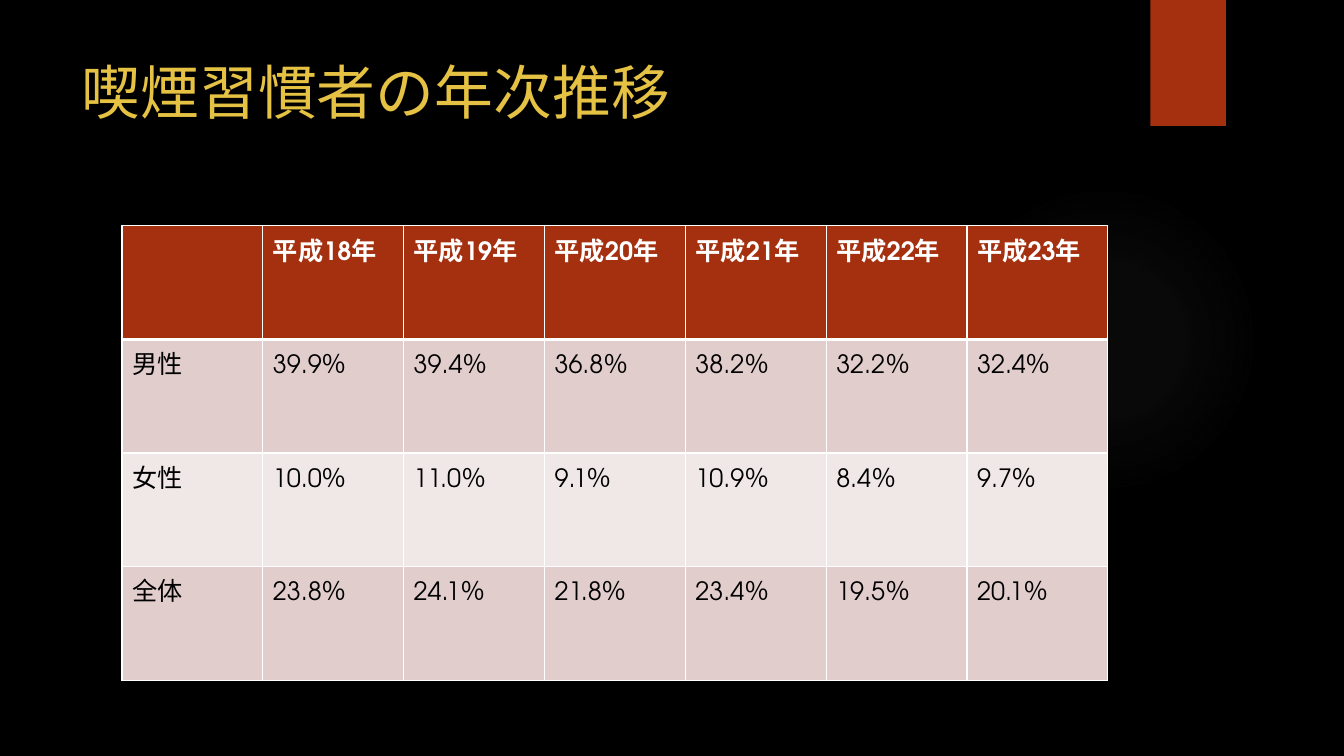
import pptx
import pptx.dml.color
import pptx.enum.shapes
import pptx.enum.text
import pptx.oxml
import pptx.oxml.ns
import pptx.util
from dataclasses import dataclass

Inches = pptx.util.Inches
Pt = pptx.util.Pt


@dataclass(frozen=True)
class Theme:
    font: str = "TeX Gyre Adventor"
    title_size: float = 42
    table_size: float = 18
    background: str = "000000"
    accent: str = "A5300F"
    title: str = "E5C243"
    glow: str = "848484"
    header_text: str = "FFFFFF"
    body_text: str = "000000"
    border: str = "FFFFFF"
    bands: tuple = ("E1CDCC", "F0E8E7")


def paint(fill, color):
    fill.solid()
    fill.fore_color.rgb = pptx.dml.color.RGBColor.from_string(color)


def xml(tag, content, attributes=""):
    return pptx.oxml.parse_xml(
        f'<a:{tag} {pptx.oxml.ns.nsdecls("a")} {attributes}>{content}</a:{tag}>')


class SlideBuilder:
    def __init__(self, slide, theme):
        self.slide = slide
        self.theme = theme
        paint(slide.background.fill, theme.background)

    def format_text(self, paragraph, size, color, bold=False):
        font = paragraph.font
        formats = {"name": self.theme.font, "size": Pt(size), "bold": bold}
        for attribute, value in formats.items():
            setattr(font, attribute, value)
        font.color.rgb = pptx.dml.color.RGBColor.from_string(color)

    def shape(self, kind, box, color):
        shape = self.slide.shapes.add_shape(kind, *map(Inches, box))
        shape.shadow.inherit = False
        shape.line.fill.background()
        paint(shape.fill, color)
        return shape

    def glow(self, box, stops):
        """Circle that fades outwards; stops are (position %, opacity %)."""
        circle = self.shape(pptx.enum.shapes.MSO_SHAPE.OVAL, box, self.theme.glow)
        stop_list = "".join(
            f'<a:gs pos="{position * 1000}"><a:srgbClr val="{self.theme.glow}">'
            f'<a:alpha val="{opacity * 1000}"/></a:srgbClr></a:gs>'
            for position, opacity in stops)
        center = '<a:fillToRect l="50000" t="50000" r="50000" b="50000"/>'
        gradient = xml("gradFill", f"<a:gsLst>{stop_list}</a:gsLst>"
                       f'<a:path path="circle">{center}</a:path>')
        properties = circle.element.spPr
        solid = properties.find(pptx.oxml.ns.qn("a:solidFill"))
        properties.replace(solid, gradient)

    def title(self, text, box):
        heading = self.slide.shapes.title
        for side, length in zip(("left", "top", "width", "height"), box):
            setattr(heading, side, Inches(length))
        frame = heading.text_frame
        frame.text = text
        formats = {"word_wrap": True,
                   "vertical_anchor": pptx.enum.text.MSO_ANCHOR.TOP,
                   "auto_size": pptx.enum.text.MSO_AUTO_SIZE.NONE}
        for attribute, value in formats.items():
            setattr(frame, attribute, value)
        frame.paragraphs[0].alignment = pptx.enum.text.PP_ALIGN.LEFT
        self.format_text(frame.paragraphs[0], self.theme.title_size, self.theme.title)

    def borders(self, cell, widths):
        properties = cell._tc.get_or_add_tcPr()
        color = f'<a:solidFill><a:srgbClr val="{self.theme.border}"/></a:solidFill>'
        for index, (side, width) in enumerate(widths.items()):
            properties.insert(index, xml(f"ln{side}", color, f'w="{Pt(width)}"'))

    def table(self, rows, box):
        table = self.slide.shapes.add_table(
            len(rows), len(rows[0]), *map(Inches, box)).table
        table.horz_banding = False
        for r, row in enumerate(rows):
            header = r == 0
            color = self.theme.header_text if header else self.theme.body_text
            fill = self.theme.accent if header else self.theme.bands[(r - 1) % 2]
            for c, text in enumerate(row):
                cell = table.cell(r, c)
                cell.text = text
                self.format_text(cell.text_frame.paragraphs[0],
                                 self.theme.table_size, color, header)
                paint(cell.fill, fill)
                self.borders(cell, {"L": 1, "R": 1, "T": 3 if r == 1 else 1,
                                    "B": 3 if header else 1})


def main():
    presentation = pptx.Presentation()
    presentation.slide_width = Inches(13.33)
    presentation.slide_height = Inches(7.5)
    title_only = presentation.slide_layouts[5]
    builder = SlideBuilder(presentation.slides.add_slide(title_only), Theme())

    # Backdrop
    builder.glow((9.41, 1.83, 3.08, 3.08), [(0, 7), (36, 6), (69, 0)])
    builder.shape(pptx.enum.shapes.MSO_SHAPE.RECTANGLE,
                  (11.41, 0, 0.75, 1.25), builder.theme.accent)

    # Heading
    builder.title("喫煙習慣者の年次推移", (0.71, 0.5, 10.29, 1.53))

    # Smoking rates by year
    smoking_rates = {
        "男性": (39.9, 39.4, 36.8, 38.2, 32.2, 32.4),
        "女性": (10.0, 11.0, 9.1, 10.9, 8.4, 9.7),
        "全体": (23.8, 24.1, 21.8, 23.4, 19.5, 20.1),
    }
    years = ["", *(f"平成{year}年" for year in range(18, 24))]
    groups = [[group, *(f"{rate:.1f}％" for rate in rates)]
              for group, rates in smoking_rates.items()]
    builder.table([years, *groups], (1.21, 2.24, 9.78, 4.51))

    presentation.save("out.pptx")


if __name__ == "__main__":
    main()
